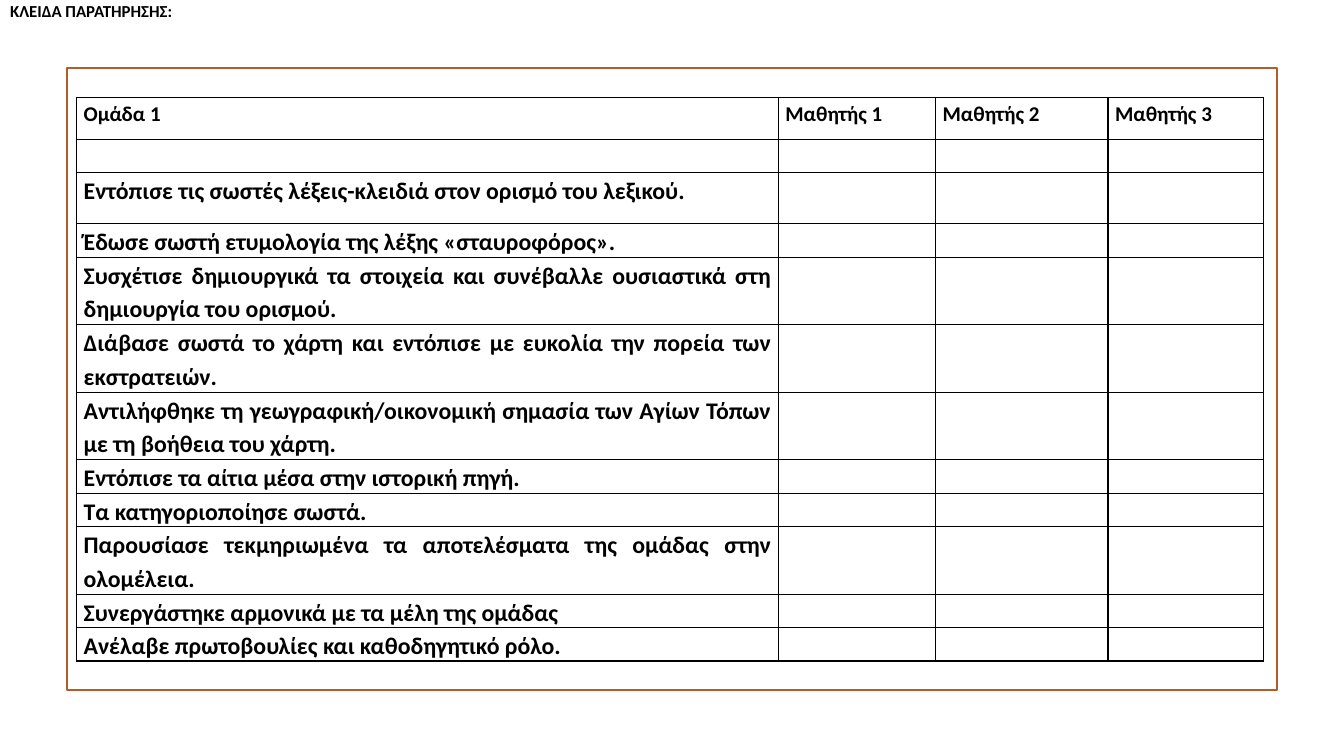
from lxml import etree
from pptx import Presentation, util as u
from pptx.dml.color import RGBColor
from pptx.enum import shapes, text
from pptx.oxml import ns

WIDTH, HEIGHT = 13.33, 7.5
FONT, BLACK, RUST = "Calibri", "000000", "B15E28"

# Table grid in inches: one-line and two-line criteria set the row heights
COLUMNS = [6.96, 1.56, 1.71, 1.54]
ONE_LINE, TWO_LINES = 0.33, 0.67
HEADER = ["Ομάδα 1", "Μαθητής 1", "Μαθητής 2", "Μαθητής 3"]
CRITERIA = [
    ("", ONE_LINE),
    ("Εντόπισε τις σωστές λέξεις-κλειδιά στον ορισμό του λεξικού.", 0.51),
    ("Έδωσε σωστή ετυμολογία της λέξης «σταυροφόρος».", ONE_LINE),
    ("Συσχέτισε δημιουργικά τα στοιχεία και συνέβαλλε ουσιαστικά στη δημιουργία του ορισμού.", TWO_LINES),
    ("Διάβασε σωστά το χάρτη και εντόπισε με ευκολία την πορεία των εκστρατειών.", TWO_LINES),
    ("Αντιλήφθηκε τη γεωγραφική/οικονομική σημασία των Αγίων Τόπων με τη βοήθεια του χάρτη.", TWO_LINES),
    ("Εντόπισε τα αίτια μέσα στην ιστορική πηγή.", ONE_LINE),
    ("Τα κατηγοριοποίησε σωστά.", ONE_LINE),
    ("Παρουσίασε τεκμηριωμένα τα αποτελέσματα της ομάδας στην ολομέλεια.", TWO_LINES),
    ("Συνεργάστηκε αρμονικά με τα μέλη της ομάδας", ONE_LINE),
    ("Ανέλαβε πρωτοβουλίες και καθοδηγητικό ρόλο.", ONE_LINE),
]


def color(value):
    return RGBColor.from_string(value)


def format_text(p, size, align):
    p.alignment = align
    for r in p.runs:
        r.font.name = FONT
        r.font.size = u.Pt(size)
        r.font.bold = True
        r.font.color.rgb = color(BLACK)


def set_title(s, title):
    sp = s.shapes.title
    sp.left, sp.top = 0, 0
    sp.width, sp.height = u.Inches(WIDTH), u.Inches(0.5)
    tf = sp.text_frame
    tf.text = title
    tf.vertical_anchor = text.MSO_ANCHOR.TOP
    tf.auto_size = text.MSO_AUTO_SIZE.NONE
    tf.margin_left = u.Inches(0.1)
    tf.margin_top = u.Inches(0.01)
    format_text(tf.paragraphs[0], 12, text.PP_ALIGN.LEFT)


def add_frame(s):
    left, top = WIDTH * 0.05, HEIGHT * 0.09
    sp = s.shapes.add_shape(shapes.MSO_SHAPE.RECTANGLE, u.Inches(left), u.Inches(top),
                            u.Inches(12), u.Inches(6.17))
    sp.shadow.inherit = False
    sp.fill.background()
    sp.line.color.rgb = color(RUST)
    sp.line.width = u.Pt(1.25)


def add_borders(cell):
    tc_pr = cell._tc.get_or_add_tcPr()
    for i, side in enumerate(("lnL", "lnR", "lnT", "lnB")):
        ln = etree.Element(ns.qn(f"a:{side}"), w=str(u.Pt(1)))
        fill = etree.SubElement(ln, ns.qn("a:solidFill"))
        etree.SubElement(fill, ns.qn("a:srgbClr"), val=BLACK)
        tc_pr.insert(i, ln)


def fill_cell(cell, words, size):
    cell.margin_left = cell.margin_right = u.Inches(0.07)
    cell.margin_top = cell.margin_bottom = 0
    cell.fill.background()
    add_borders(cell)
    p = cell.text_frame.paragraphs[0]
    p.text = words
    p.line_spacing = 1.15
    p.font.size = u.Pt(size)
    format_text(p, size, text.PP_ALIGN.JUSTIFY)


def add_checklist(s):
    rows = [(HEADER, 0.41, 15)]
    rows += [([words, "", "", ""], height, 17) for words, height in CRITERIA]
    table = s.shapes.add_table(len(rows), len(COLUMNS), u.Inches(0.76), u.Inches(0.97),
                               u.Inches(sum(COLUMNS)),
                               u.Inches(sum(height for _, height, _ in rows))).table
    table.first_row = table.horz_banding = False
    for column, width in zip(table.columns, COLUMNS):
        column.width = u.Inches(width)
    for row, (cells, height, size) in zip(table.rows, rows):
        row.height = u.Inches(height)
        for cell, words in zip(row.cells, cells):
            fill_cell(cell, words, size)


def main():
    prs = Presentation()
    prs.slide_width, prs.slide_height = u.Inches(WIDTH), u.Inches(HEIGHT)
    s = prs.slides.add_slide(prs.slide_layouts.get_by_name("Title Only"))
    add_frame(s)
    add_checklist(s)
    set_title(s, "ΚΛΕΙΔΑ ΠΑΡΑΤΗΡΗΣΗΣ:")
    prs.save("out.pptx")


if __name__ == "__main__":
    main()
